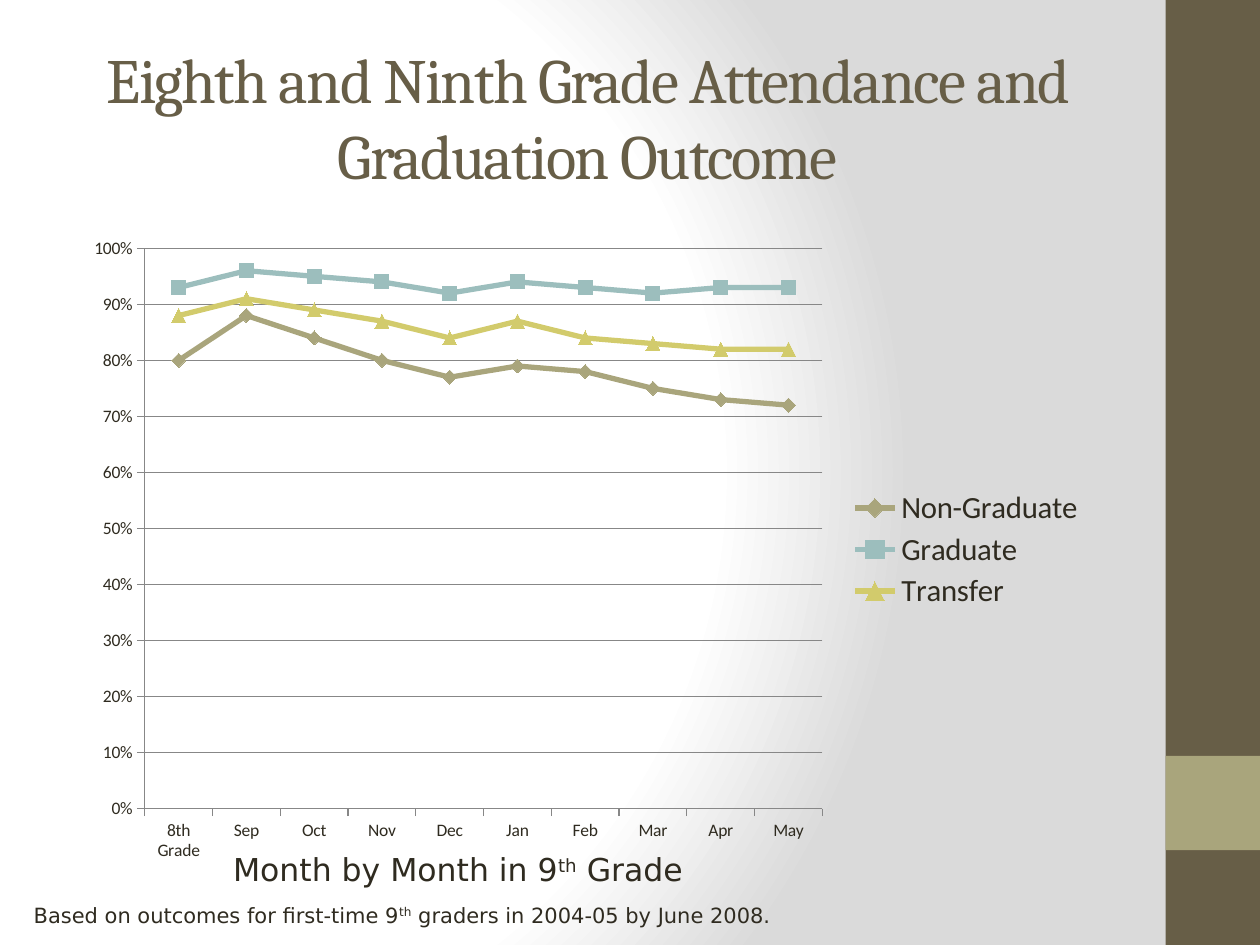
from dataclasses import dataclass

from lxml import etree
from pptx import Presentation
from pptx.chart.data import CategoryChartData
from pptx.dml.color import RGBColor
from pptx.enum import chart as charts, shapes, text
from pptx.oxml import parse_xml
from pptx.oxml.ns import nsdecls, qn
from pptx.util import Cm, Pt

COLORS = {
    "title": "675E47",
    "accent": "A9A57C",
    "text": "2F2B20",
    "graduate": "9CBEBD",
    "transfer": "D2CB6C",
    "axis": "878787",
}


@dataclass(frozen=True)
class Box:
    left: float
    top: float
    width: float
    height: float

    def lengths(self) -> tuple:
        return Cm(self.left), Cm(self.top), Cm(self.width), Cm(self.height)


@dataclass(frozen=True)
class Band:
    box: Box
    color: str


@dataclass(frozen=True)
class Caption:
    box: Box
    size: float
    before: str
    superscript: str
    after: str


@dataclass(frozen=True)
class Outcome:
    name: str
    color: str
    marker: charts.XL_MARKER_STYLE
    percents: tuple


BANDS = (
    Band(Box(23.5, 0, 1.9, 19.05), "title"),
    Band(Box(23.5, 15.24, 1.9, 1.9), "accent"),
)
CAPTIONS = (
    Caption(Box(4.45, 17.02, 12.07, 1.02), 18, "Month by Month in 9", "th", " Grade"),
    Caption(Box(0.43, 18.06, 18.85, 0.76), 12,
            "Based on outcomes for first-time 9", "th",
            " graders in 2004-05 by June 2008."),
)
MONTHS = ("8th Grade", "Sep", "Oct", "Nov", "Dec", "Jan", "Feb", "Mar", "Apr", "May")
OUTCOMES = (
    Outcome("Non-Graduate", "accent", charts.XL_MARKER_STYLE.DIAMOND,
            (80, 88, 84, 80, 77, 79, 78, 75, 73, 72)),
    Outcome("Graduate", "graduate", charts.XL_MARKER_STYLE.SQUARE,
            (93, 96, 95, 94, 92, 94, 93, 92, 93, 93)),
    Outcome("Transfer", "transfer", charts.XL_MARKER_STYLE.TRIANGLE,
            (88, 91, 89, 87, 84, 87, 84, 83, 82, 82)),
)


def color(name: str) -> RGBColor:
    return RGBColor.from_string(COLORS[name])


def format_font(font, name: str, size: float, color_name: str) -> None:
    font.name = name
    font.size = Pt(size)
    font.color.rgb = color(color_name)


def set_background(slide) -> None:
    slide.background.fill.solid()
    solid = slide.element.find(".//" + qn("p:bgPr")).find(qn("a:solidFill"))
    stops = ((0, "FFFFFF"), (75000, "FFFFFF"), (100000, "DADADA"))
    stop_xml = "".join(
        f'<a:gs pos="{position}"><a:srgbClr val="{value}"/></a:gs>'
        for position, value in stops)
    gradient = parse_xml(
        f'<a:gradFill {nsdecls("a")} rotWithShape="1"><a:gsLst>{stop_xml}</a:gsLst>'
        '<a:path path="circle"><a:fillToRect l="20000" t="50000" r="100000" b="50000"/>'
        '</a:path></a:gradFill>')
    solid.getparent().replace(solid, gradient)


def draw_band(slide, band: Band) -> None:
    shape = slide.shapes.add_shape(shapes.MSO_SHAPE.RECTANGLE, *band.box.lengths())
    shape.shadow.inherit = False
    shape.fill.solid()
    shape.fill.fore_color.rgb = color(band.color)
    shape.line.fill.background()


def draw_title(slide) -> None:
    title = slide.shapes.title
    title.left, title.top, title.width, title.height = Box(1.27, 0.76, 21.16, 3.18).lengths()
    frame = title.text_frame
    frame.text = "Eighth and Ninth Grade Attendance and Graduation Outcome"
    frame.word_wrap = True
    frame.vertical_anchor = text.MSO_ANCHOR.MIDDLE
    paragraph = frame.paragraphs[0]
    paragraph.alignment = text.PP_ALIGN.CENTER
    run = paragraph.runs[0]
    format_font(run.font, "Cambria", 36, "title")
    run._r.get_or_add_rPr().set("spc", "-100")


def draw_caption(slide, caption: Caption) -> None:
    frame = slide.shapes.add_textbox(*caption.box.lengths()).text_frame
    frame.word_wrap = True
    frame.auto_size = text.MSO_AUTO_SIZE.SHAPE_TO_FIT_TEXT
    paragraph = frame.paragraphs[0]
    for words in (caption.before, caption.superscript, caption.after):
        run = paragraph.add_run()
        run.text = words
        format_font(run.font, "DejaVu Sans", caption.size, "text")
    paragraph.runs[1]._r.get_or_add_rPr().set("baseline", "30000")


def manual_layout(parent, box: Box, inner: bool = False):
    for old in parent.findall(qn("c:layout")):
        parent.remove(old)
    layout = parse_xml(f'<c:layout {nsdecls("c")}/>')
    manual = etree.SubElement(layout, qn("c:manualLayout"))
    settings = [("layoutTarget", "inner")] if inner else []
    settings += [("xMode", "edge"), ("yMode", "edge"), ("x", box.left),
                 ("y", box.top), ("w", box.width), ("h", box.height)]
    for tag, value in settings:
        etree.SubElement(manual, qn(f"c:{tag}")).set("val", str(value))
    return layout


def format_axes(chart) -> None:
    value_axis = chart.value_axis
    value_axis.minimum_scale, value_axis.maximum_scale = 0, 1
    value_axis.major_unit = 0.1
    value_axis.tick_labels.number_format = "0%"
    value_axis.tick_labels.number_format_is_linked = False
    value_axis.has_major_gridlines = True
    for axis in (chart.category_axis, value_axis):
        axis.major_tick_mark = charts.XL_TICK_MARK.OUTSIDE
        axis.minor_tick_mark = charts.XL_TICK_MARK.NONE
    for owner in (chart.category_axis, value_axis, value_axis.major_gridlines):
        owner.format.line.color.rgb = color("axis")
        owner.format.line.width = Pt(0.75)


def draw_chart(slide) -> None:
    data = CategoryChartData(number_format="0%")
    data.categories = MONTHS
    for outcome in OUTCOMES:
        data.add_series(outcome.name, [percent / 100 for percent in outcome.percents])
    chart = slide.shapes.add_chart(
        charts.XL_CHART_TYPE.LINE_MARKERS, *Box(1.47, 4.55, 20.7, 13.06).lengths(), data).chart
    chart.has_title = False
    format_font(chart.font, "Calibri", 10, "text")
    chart.plots[0].vary_by_categories = False
    format_axes(chart)
    for series, outcome in zip(chart.plots[0].series, OUTCOMES):
        series.smooth = False
        series.format.line.color.rgb = color(outcome.color)
        series.format.line.width = Pt(3)
        series.marker.style = outcome.marker
        series.marker.size = 8
        series.marker.format.fill.solid()
        series.marker.format.fill.fore_color.rgb = color(outcome.color)
        series.marker.format.line.color.rgb = color(outcome.color)
    chart.has_legend = True
    chart.legend.position = charts.XL_LEGEND_POSITION.RIGHT
    chart.legend.include_in_layout = False
    format_font(chart.legend.font, "Calibri", 17.6, "text")
    plot_area = chart.element.find(".//" + qn("c:plotArea"))
    plot_area.insert(0, manual_layout(plot_area, Box(0.07, 0.035, 0.66, 0.865), inner=True))
    legend = chart.element.find(".//" + qn("c:legend"))
    legend_layout = manual_layout(legend, Box(0.75, 0.4, 0.24, 0.2))
    legend.find(qn("c:overlay")).addprevious(legend_layout)


def main() -> None:
    presentation = Presentation()
    presentation.slide_width, presentation.slide_height = Cm(25.4), Cm(19.05)
    slide = presentation.slides.add_slide(presentation.slide_layouts[5])
    set_background(slide)
    for band in BANDS:
        draw_band(slide, band)
    draw_title(slide)
    draw_chart(slide)
    for caption in CAPTIONS:
        draw_caption(slide, caption)
    presentation.save("out.pptx")


if __name__ == "__main__":
    main()
